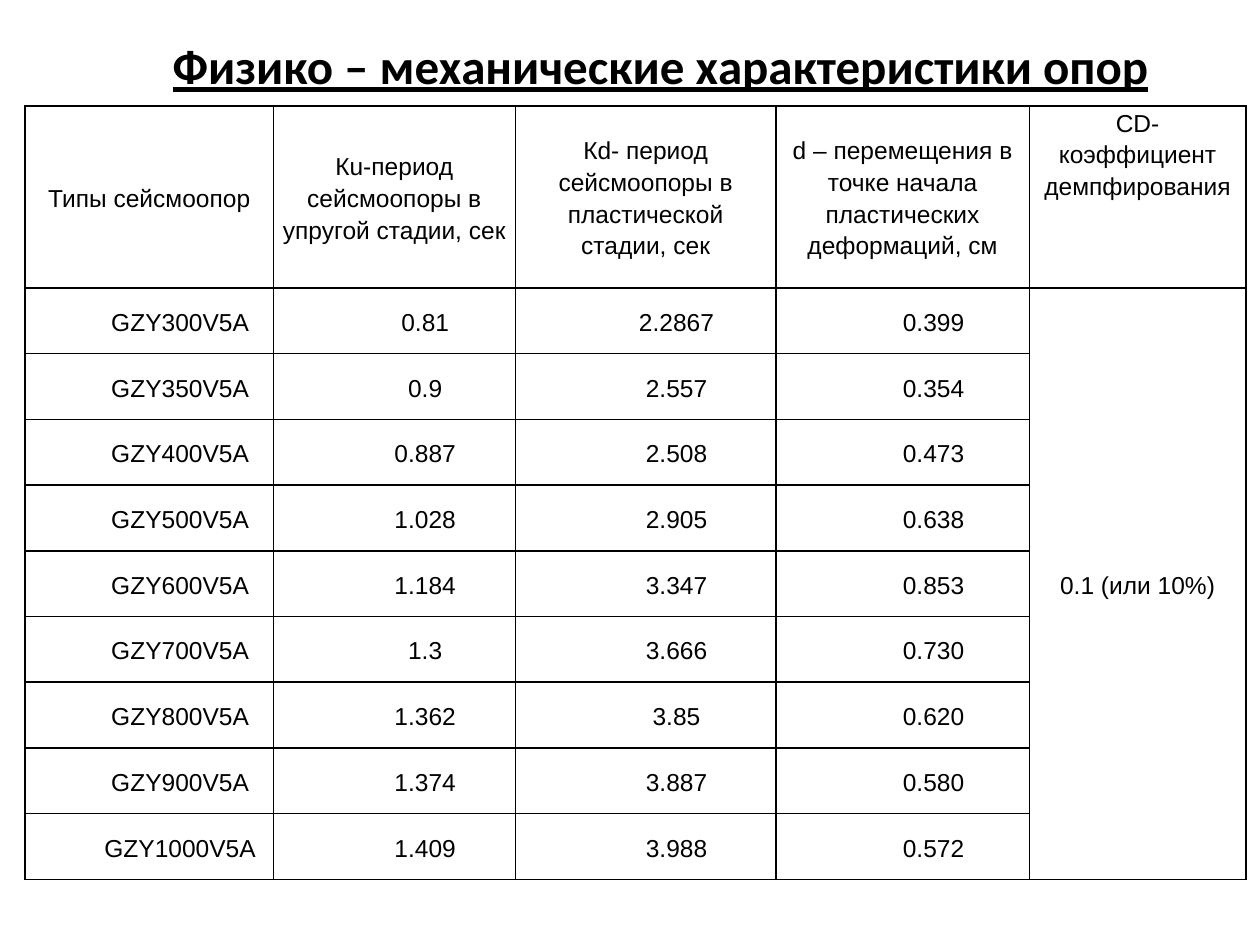
from lxml import etree
from pptx import Presentation
from pptx import util as u
from pptx.dml.color import RGBColor
from pptx.enum import text
from pptx.oxml.ns import qn

BLACK = RGBColor(0x00, 0x00, 0x00)
FIRST_LINE_INDENT = u.Inches(0.49)
COLUMN_WIDTHS = (1.97, 1.92, 2.07, 2.01, 1.72)
HEADER_HEIGHT, ROW_HEIGHT = 1.44, 0.52

HEADERS = (
    "Типы сейсмоопор",
    "Кu-период сейсмоопоры в упругой стадии, сек",
    "Кd- период сейсмоопоры в пластической\nстадии, сек",
    "d – перемещения в точке начала пластических деформаций, см",
    "CD- коэффициент демпфирования",
)
BEARINGS = (
    ("GZY300V5A", "0.81", "2.2867", "0.399"),
    ("GZY350V5A", "0.9", "2.557", "0.354"),
    ("GZY400V5A", "0.887", "2.508", "0.473"),
    ("GZY500V5A", "1.028", "2.905", "0.638"),
    ("GZY600V5A", "1.184", "3.347", "0.853"),
    ("GZY700V5A", "1.3", "3.666", "0.730"),
    ("GZY800V5A", "1.362", "3.85", "0.620"),
    ("GZY900V5A", "1.374", "3.887", "0.580"),
    ("GZY1000V5A", "1.409", "3.988", "0.572"),
)
DAMPING = "0.1 (или 10%)"


def write_text(frame, content, font="Arial", size=14, bold=False,
               underline=False, spacing=1.0, indent=0):
    """Fill a text frame with centred paragraphs, one for each line."""
    frame.word_wrap = True
    for index, line in enumerate(content.split("\n")):
        paragraph = frame.paragraphs[0] if index == 0 else frame.add_paragraph()
        paragraph.alignment = text.PP_ALIGN.CENTER
        paragraph.line_spacing = spacing
        if indent:
            properties = paragraph._p.get_or_add_pPr()
            properties.set("marL", "0")
            properties.set("indent", str(indent))
        run = paragraph.add_run()
        run.text = line
        run.font.name = font
        run.font.size = u.Pt(size)
        run.font.bold = bold
        run.font.underline = underline
        run.font.color.rgb = BLACK


def format_cell(cell):
    """Give a cell its margins, a thin black border and no fill."""
    cell.margin_left = cell.margin_right = u.Inches(0.07)
    cell.margin_top = cell.margin_bottom = 0
    cell.vertical_anchor = text.MSO_ANCHOR.MIDDLE
    properties = cell._tc.get_or_add_tcPr()
    for side in ("a:lnL", "a:lnR", "a:lnT", "a:lnB"):
        line = etree.SubElement(properties, qn(side), w=str(u.Pt(1)))
        fill = etree.SubElement(line, qn("a:solidFill"))
        etree.SubElement(fill, qn("a:srgbClr"), val=str(BLACK))
    cell.fill.background()


def place_title(slide, left, top, width, height):
    title = slide.shapes.title
    title.left, title.top, title.width, title.height = left, top, width, height
    title.text_frame.auto_size = text.MSO_AUTO_SIZE.NONE
    write_text(title.text_frame, "Физико – механические характеристики опор",
               font="Calibri", size=28, bold=True, underline=True)


def place_table(slide, left, top, width, height):
    """Draw the bearing table; its columns and rows share the given box."""
    row_heights = [HEADER_HEIGHT] + [ROW_HEIGHT] * len(BEARINGS)
    table = slide.shapes.add_table(
        len(row_heights), len(COLUMN_WIDTHS), left, top, width, height).table
    table.first_row = table.horz_banding = False
    for column, share in zip(table.columns, COLUMN_WIDTHS):
        column.width = round(width * share / sum(COLUMN_WIDTHS))
    for row, share in zip(table.rows, row_heights):
        row.height = round(height * share / sum(row_heights))
    for cell in table.iter_cells():
        format_cell(cell)

    last = len(COLUMN_WIDTHS) - 1
    for column, header in enumerate(HEADERS):
        write_text(table.cell(0, column).text_frame, header, spacing=1.15)
    table.cell(0, last).vertical_anchor = text.MSO_ANCHOR.TOP
    for row, values in enumerate(BEARINGS, start=1):
        for column, value in enumerate(values):
            write_text(table.cell(row, column).text_frame, value,
                       spacing=1.15, indent=FIRST_LINE_INDENT)
    damping = table.cell(1, last)
    damping.merge(table.cell(len(BEARINGS), last))
    write_text(damping.text_frame, DAMPING, spacing=1.15)


def main():
    presentation = Presentation()
    presentation.slide_width = u.Inches(10)
    presentation.slide_height = u.Inches(7.5)
    slide = presentation.slides.add_slide(presentation.slide_layouts[5])
    place_title(slide, u.Inches(1.02), u.Inches(0.23),
                u.Inches(8.44), u.Inches(0.57))
    place_table(slide, u.Inches(0.2), u.Inches(0.84),
                u.Inches(9.69), u.Inches(6.14))
    presentation.save("out.pptx")


if __name__ == "__main__":
    main()
